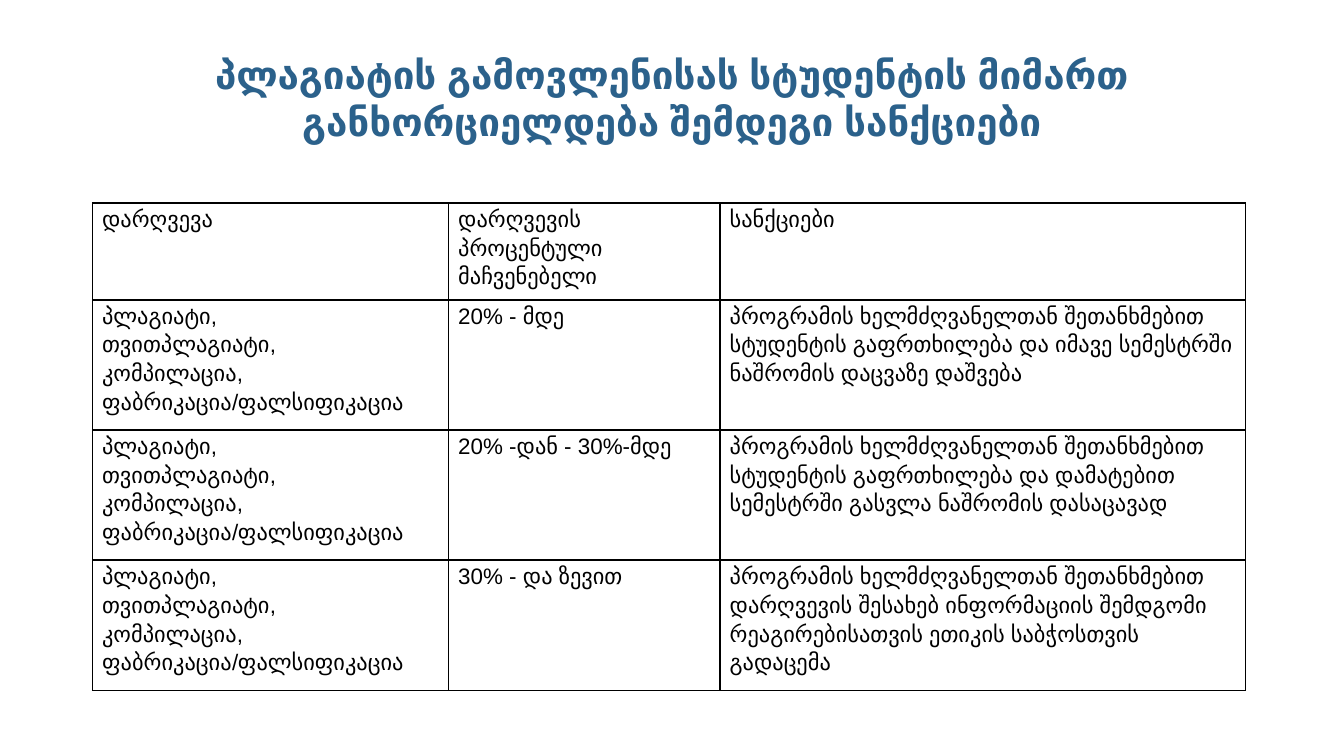
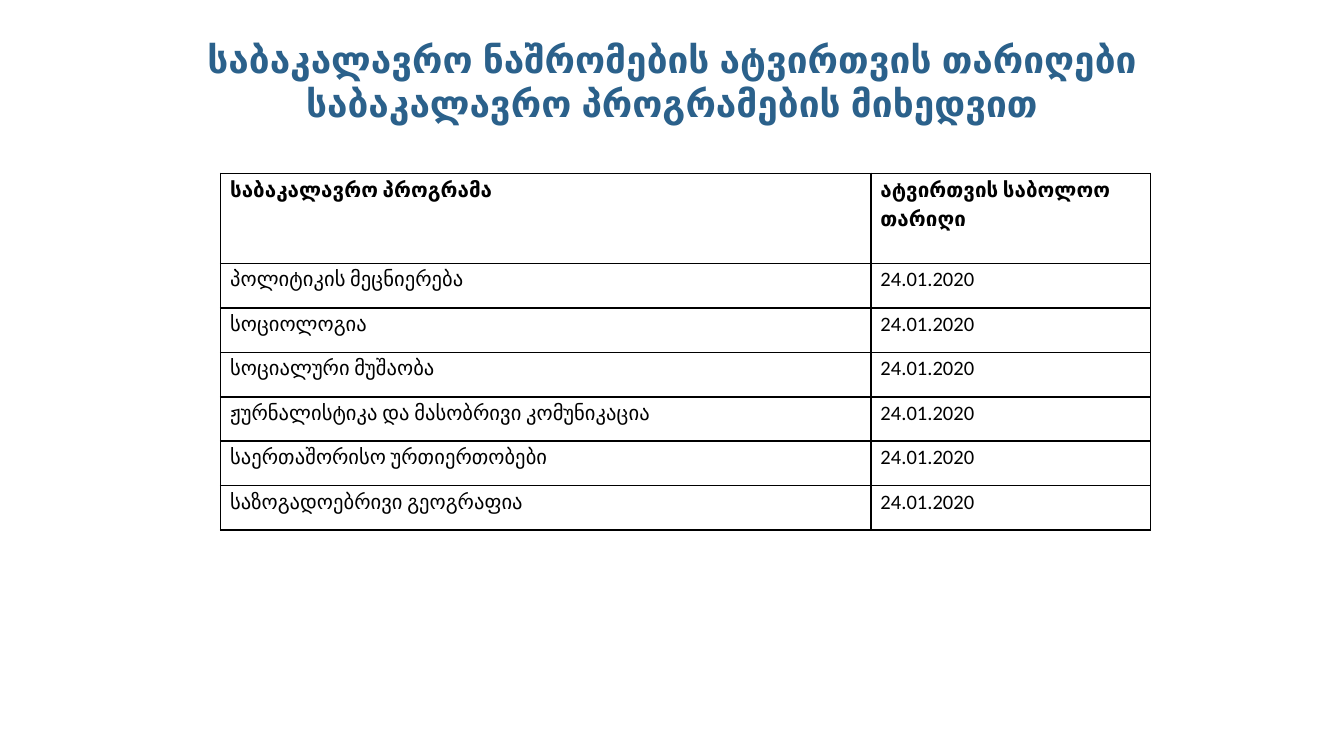
from lxml.etree import fromstring
from pptx import Presentation
from pptx.dml.color import RGBColor
from pptx.enum.text import MSO_ANCHOR, PP_ALIGN
from pptx.oxml.ns import nsdecls
from pptx.util import Cm, Pt

TITLE_BLUE = RGBColor(0x2B, 0x61, 0x8B)
BLACK = RGBColor(0x00, 0x00, 0x00)
WHITE = RGBColor(0xFF, 0xFF, 0xFF)

TITLE_FONT = "Arial"
TITLE_PADDING = Cm(0.25)
CELL_PADDING = Cm(0.18)
LINE_SPACING = 1.15
BORDER_WIDTH = Pt(1)

VIOLATIONS = "პლაგიატი,\nთვითპლაგიატი,\nკომპილაცია,\nფაბრიკაცია/ფალსიფიკაცია"
UPLOAD_DATE = "24.01.2020"
PROGRAMMES = [
    "პოლიტიკის მეცნიერება",
    "სოციოლოგია",
    "სოციალური მუშაობა",
    "ჟურნალისტიკა და მასობრივი კომუნიკაცია",
    "საერთაშორისო ურთიერთობები",
    "საზოგადოებრივი გეოგრაფია",
]


def style_runs(paragraph, font_name, size, color, bold):
    for run in paragraph.runs:
        run.font.name = font_name
        run.font.size = Pt(size)
        run.font.color.rgb = color
        run.font.bold = bold


def add_slide(prs):
    slide = prs.slides.add_slide(prs.slide_layouts[6])
    slide.background.fill.solid()
    slide.background.fill.fore_color.rgb = WHITE
    return slide


def add_title(slide, text, height, size):
    title = slide.shapes.add_textbox(Cm(1.27), Cm(0.58), Cm(22.86), Cm(height))
    frame = title.text_frame
    frame.text = text
    frame.word_wrap = True
    frame.vertical_anchor = MSO_ANCHOR.BOTTOM
    frame.margin_left = frame.margin_right = TITLE_PADDING
    frame.margin_top = frame.margin_bottom = TITLE_PADDING
    heading = frame.paragraphs[0]
    heading.alignment = PP_ALIGN.CENTER
    style_runs(heading, TITLE_FONT, size, TITLE_BLUE, True)


def add_borders(cell):
    # Border lines come before the fill in the cell properties
    properties = cell._tc.get_or_add_tcPr()
    for position, side in enumerate(("lnL", "lnR", "lnT", "lnB")):
        properties.insert(position, fromstring(
            f'<a:{side} {nsdecls("a")} w="{BORDER_WIDTH}"><a:solidFill>'
            f'<a:srgbClr val="{BLACK}"/></a:solidFill></a:{side}>'))


def fill_cell(cell, text, font_name, size, bold):
    cell.text_frame.text = text
    cell.margin_left = cell.margin_right = CELL_PADDING
    cell.margin_top = cell.margin_bottom = 0
    cell.fill.background()
    add_borders(cell)
    for paragraph in cell.text_frame.paragraphs:
        paragraph.line_spacing = LINE_SPACING
        style_runs(paragraph, font_name, size, BLACK, bold)


def add_grid(slide, left, top, widths, heights, rows, font_name, size,
             bold_header=False):
    frame = slide.shapes.add_table(len(rows), len(widths), Cm(left), Cm(top),
                                   Cm(sum(widths)), Cm(sum(heights)))
    grid = frame.table
    grid.first_row = grid.horz_banding = False
    for column, width in zip(grid.columns, widths):
        column.width = Cm(width)
    for row, height in zip(grid.rows, heights):
        row.height = Cm(height)
    for r, texts in enumerate(rows):
        for c, text in enumerate(texts):
            fill_cell(grid.cell(r, c), text, font_name, size,
                      bold_header and r == 0)


def build_sanctions(prs):
    slide = add_slide(prs)
    add_title(slide, "პლაგიატის გამოვლენისას სტუდენტის მიმართ "
              "განხორციელდება შემდეგი სანქციები", 2.39, 20.7)
    # Violation, its share and the sanction
    rows = [
        ("დარღვევა", "დარღვევის პროცენტული მაჩვენებელი", "სანქციები"),
        (VIOLATIONS, "20% - მდე",
         "პროგრამის ხელმძღვანელთან შეთანხმებით სტუდენტის გაფრთხილება "
         "და იმავე სემესტრში ნაშრომის დაცვაზე დაშვება"),
        (VIOLATIONS, "20% -დან - 30%-მდე",
         "პროგრამის ხელმძღვანელთან შეთანხმებით სტუდენტის გაფრთხილება "
         "და დამატებით სემესტრში გასვლა ნაშრომის დასაცავად"),
        (VIOLATIONS, "30% - და ზევით",
         "პროგრამის ხელმძღვანელთან შეთანხმებით დარღვევის შესახებ "
         "ინფორმაციის შემდგომი რეაგირებისათვის ეთიკის საბჭოსთვის გადაცემა"),
    ]
    add_grid(slide, 1.75, 3.84, [6.73, 5.13, 9.93], [1.83] + [2.46] * 3,
             rows, "Arial", 12)


def build_upload_dates(prs):
    slide = add_slide(prs)
    add_title(slide, "საბაკალავრო ნაშრომების ატვირთვის თარიღები "
              "საბაკალავრო პროგრამების მიხედვით", 2.03, 19.8)
    # Every programme shares one deadline
    rows = [("საბაკალავრო პროგრამა", "ატვირთვის საბოლოო თარიღი")]
    rows += [(programme, UPLOAD_DATE) for programme in PROGRAMMES]
    add_grid(slide, 4.17, 3.28, [12.29, 5.28],
             [1.7] + [0.84] * len(PROGRAMMES), rows, "Calibri", 11,
             bold_header=True)


def main():
    prs = Presentation()
    prs.slide_width, prs.slide_height = Cm(25.4), Cm(14.29)
    build_sanctions(prs)
    build_upload_dates(prs)
    prs.save("out.pptx")


if __name__ == "__main__":
    main()
